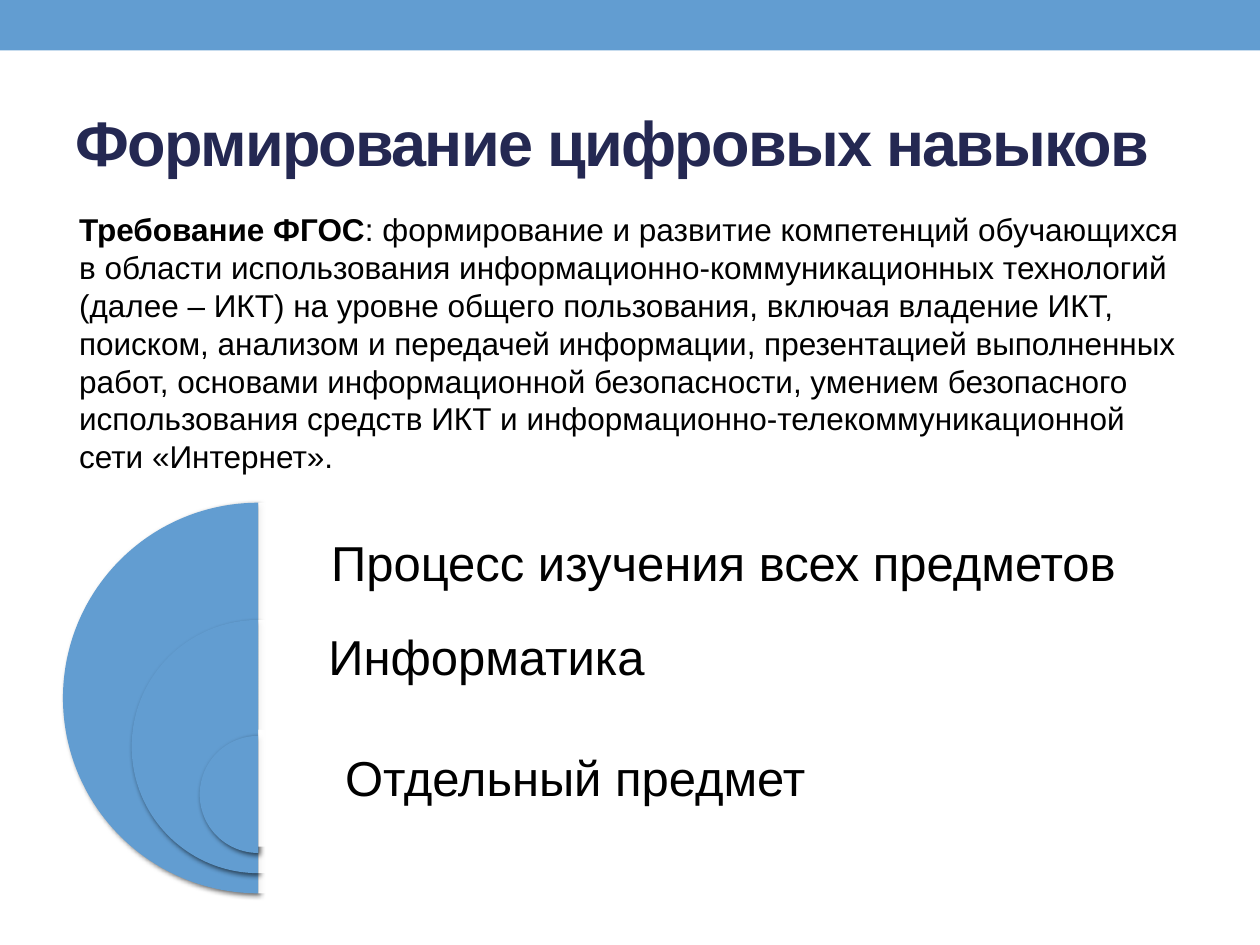
from lxml import etree
from pptx import Presentation
from pptx import util as u
from pptx.dml.color import RGBColor
from pptx.enum import shapes, text
from pptx.oxml import ns

BLUE = RGBColor(0x62, 0x9D, 0xD1)
NAVY = RGBColor(0x24, 0x28, 0x52)
BLACK = RGBColor(0, 0, 0)
WHITE = RGBColor(255, 255, 255)
FONT = "Arial"

TITLE = "Формирование цифровых навыков"
REQUIREMENT = [
    ("Требование ФГОС", True),
    (": формирование и развитие компетенций обучающихся в области использования "
     "информационно-коммуникационных технологий (далее – ИКТ) на уровне общего "
     "пользования, включая владение ИКТ, поиском, анализом и передачей информации, "
     "презентацией выполненных работ, основами информационной безопасности, умением "
     "безопасного использования средств ИКТ и информационно-телекоммуникационной "
     "сети «Интернет».", False),
]
LEFT, CENTER = text.PP_ALIGN.LEFT, text.PP_ALIGN.CENTER
LABELS = [
    ("Процесс изучения всех предметов", (2.53, 4.18, 6.97, 0.57), LEFT),
    ("Информатика ", (2.05, 4.92, 3.73, 0.93), CENTER),
    ("Отдельный предмет", (2.64, 5.88, 5.75, 0.57), LEFT),
]
AXIS, PANEL_RIGHT = 2.05, 9.5
LEVELS = [(3.99, 3.1, 3.99), (4.92, 2.01, 4.92), (5.84, 0.93, 5.79)]


def inches(*box):
    return [u.Inches(value) for value in box]


def add_element(parent, tag, **attributes):
    return etree.SubElement(parent, ns.qn(tag), attributes)


def add_filled(slide, kind, box, color):
    shape = slide.shapes.add_shape(kind, *inches(*box))
    shape.shadow.inherit = False
    shape.fill.solid()
    shape.fill.fore_color.rgb = color
    shape.line.fill.background()
    return shape


def add_shadow(shape):
    effects = shape._element.spPr.find(ns.qn("a:effectLst"))
    shadow = add_element(effects, "a:outerShdw", blurRad=str(u.Pt(3)), dist=str(u.Pt(2)),
                         dir="2700000", algn="ctr", rotWithShape="0")
    color = add_element(shadow, "a:srgbClr", val="000000")
    add_element(color, "a:alpha", val="60000")


def set_opacity(shape, percent):
    color = shape._element.spPr.find(ns.qn("a:solidFill"))[0]
    add_element(color, "a:alpha", val=str(percent * 1000))


def add_run(paragraph, words, size, color, bold=False):
    run = paragraph.add_run()
    run.text = words
    run.font.name = FONT
    run.font.size = u.Pt(size)
    run.font.bold = bold
    run.font.color.rgb = color
    return run


def add_text(slide, box, runs, size, alignment=LEFT):
    frame = slide.shapes.add_textbox(*inches(*box)).text_frame
    frame.word_wrap = True
    paragraph = frame.paragraphs[0]
    paragraph.alignment = alignment
    for words, bold in runs:
        add_run(paragraph, words, size, BLACK, bold)


def add_title(slide):
    title = slide.shapes.title
    title.left, title.top, title.width, title.height = inches(0.5, 0.58, 9, 1.08)
    title.text_frame.vertical_anchor = text.MSO_ANCHOR.MIDDLE
    paragraph = title.text_frame.paragraphs[0]
    paragraph.alignment = LEFT
    run = add_run(paragraph, TITLE, 36, NAVY, True)
    run.font._element.set("spc", "-100")


def add_levels(slide):
    for top, diameter, panel_top in LEVELS:
        pie = add_filled(slide, shapes.MSO_SHAPE.PIE,
                         (AXIS - diameter / 2, top, diameter, diameter), BLUE)
        pie.adjustments[0], pie.adjustments[1] = 54, 162
        add_shadow(pie)
        panel = add_filled(slide, shapes.MSO_SHAPE.RECTANGLE,
                           (AXIS, panel_top, PANEL_RIGHT - AXIS, diameter), WHITE)
        set_opacity(panel, 90)


def main():
    presentation = Presentation()
    presentation.slide_width, presentation.slide_height = inches(10, 7.5)
    slide = presentation.slides.add_slide(presentation.slide_layouts[5])
    add_filled(slide, shapes.MSO_SHAPE.RECTANGLE, (0, 0, 10, 0.4), BLUE)
    add_title(slide)
    add_levels(slide)
    for words, box, alignment in LABELS:
        add_text(slide, box, [(words, False)], 28, alignment)
    add_text(slide, (0.53, 1.62, 9, 2.22), REQUIREMENT, 18)
    presentation.save("out.pptx")


if __name__ == "__main__":
    main()
